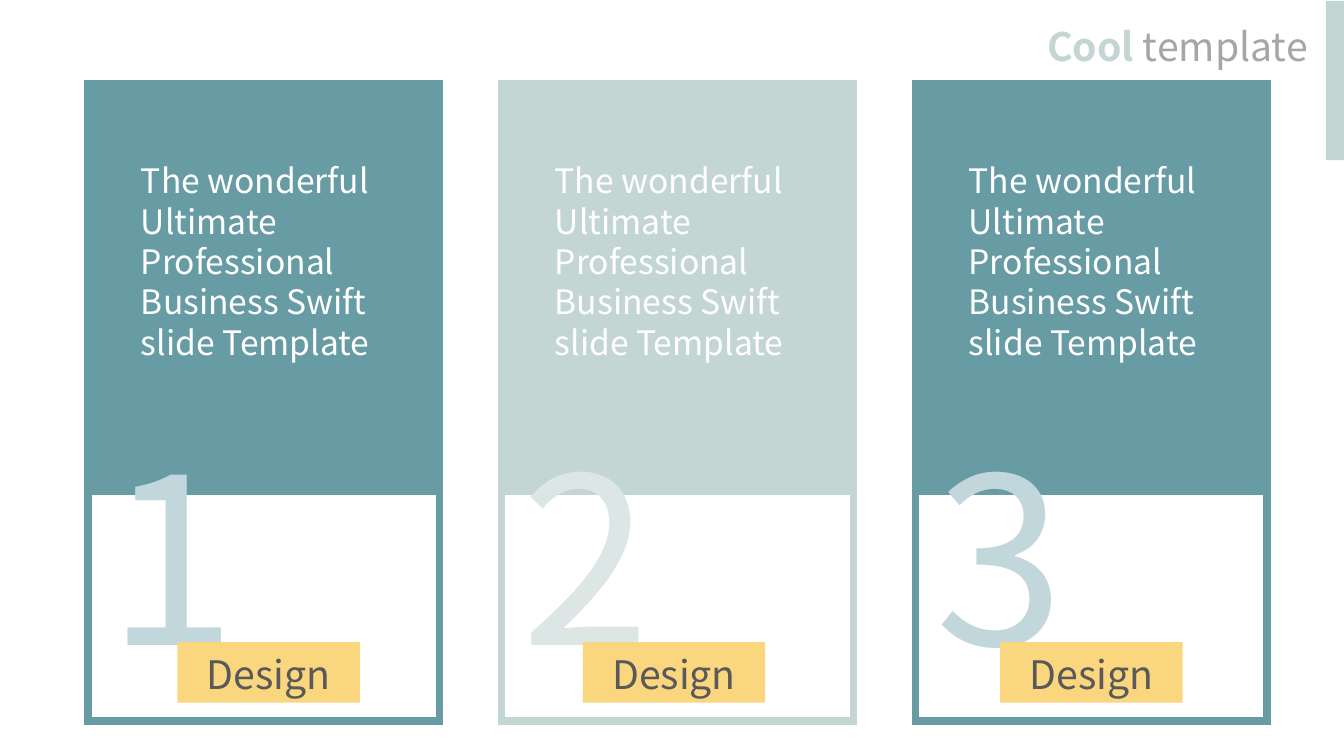
from lxml.etree import SubElement
from pptx import Presentation
from pptx.dml.color import RGBColor
from pptx.enum.shapes import MSO_SHAPE
from pptx.enum.text import MSO_ANCHOR, PP_ALIGN
from pptx.oxml.ns import qn
from pptx.util import Inches, Pt

FONT = "Noto Sans CJK JP"
TEAL, MIST, YELLOW, WHITE = "679CA4", "C4D6D4", "FAD67E", "FFFFFF"
DARK_GRAY, GRAY = "595959", "A6A6A6"
MESSAGE = "The wonderful Ultimate Professional Business Swift slide Template"

# Number, card colour, number colour, left edge of the label
CARDS = [
    ("1", TEAL, "C2D7DB", 1.76),
    ("2", MIST, "DCE6E5", 5.78),
    ("3", TEAL, "C2D7DB", 9.92),
]
FIRST_LEFT, CARD_STEP, CARD_WIDTH = 0.87, 4.105, 3.49


def color(value):
    return RGBColor.from_string(value)


def add_block(page, left, top, width, height, fill, line=None):
    """Add a plain rectangle, with a square-cornered outline if a line colour is given."""
    block = page.shapes.add_shape(
        MSO_SHAPE.RECTANGLE, Inches(left), Inches(top), Inches(width), Inches(height))
    block.shadow.inherit = False
    block.fill.solid()
    block.fill.fore_color.rgb = color(fill)
    if line:
        block.line.color.rgb = color(line)
        block.line.width = Pt(5.5)
        outline = block.line.fill._xPr
        SubElement(outline, qn("a:miter"), lim="800000")
    else:
        block.line.fill.background()
    return block


def add_span(para, text, size, fill, bold=False):
    span = para.add_run()
    span.text = text
    span.font.name = FONT
    span.font.size = Pt(size)
    span.font.bold = bold
    span.font.color.rgb = color(fill)


def write(box, *spans, size, align=PP_ALIGN.LEFT, wrap=True):
    """Fill a box with one paragraph of (text, colour, bold) spans."""
    frame = box.text_frame
    frame.word_wrap = wrap
    frame.vertical_anchor = MSO_ANCHOR.TOP
    para = frame.paragraphs[0]
    para.alignment = align
    for text, fill, bold in spans:
        add_span(para, text, size, fill, bold)


def add_text(page, left, top, width, height, *spans, **text_format):
    box = page.shapes.add_textbox(
        Inches(left), Inches(top), Inches(width), Inches(height))
    write(box, *spans, **text_format)


def add_label(page, left):
    label = add_block(page, left, 6.37, 1.81, 0.6, YELLOW)
    label.text_frame.margin_top = Inches(0.08)
    write(label, ("Design", DARK_GRAY, False), size=28, align=PP_ALIGN.CENTER)


def add_card(page, left, number, fill, number_fill, label_left):
    # Coloured upper panel and framed lower panel
    add_block(page, left, 0.83, CARD_WIDTH, 4.02, fill, line=fill)
    add_block(page, left, 4.87, CARD_WIDTH, 2.28, WHITE, line=fill)
    # Number, label and message
    add_text(page, left + 0.1, 4.05, 1.65, 2.89, (number, number_fill, False),
             size=166, wrap=False)
    add_label(page, label_left)
    add_text(page, left + 0.43, 1.54, 2.64, 2.52, (MESSAGE, WHITE, False), size=24)


def main():
    deck = Presentation()
    deck.slide_width, deck.slide_height = Inches(13.33), Inches(7.5)
    page = deck.slides.add_slide(deck.slide_layouts[6])

    # Three numbered cards
    for index, card in enumerate(CARDS):
        add_card(page, FIRST_LEFT + index * CARD_STEP, *card)

    # Title with its corner bar
    add_block(page, 13.15, 0.01, 0.18, 1.58, MIST)
    add_text(page, 10.14, 0.17, 2.93, 0.57,
             ("Cool ", MIST, True), ("template", GRAY, False),
             size=28, align=PP_ALIGN.RIGHT, wrap=False)

    deck.save("out.pptx")


if __name__ == "__main__":
    main()
